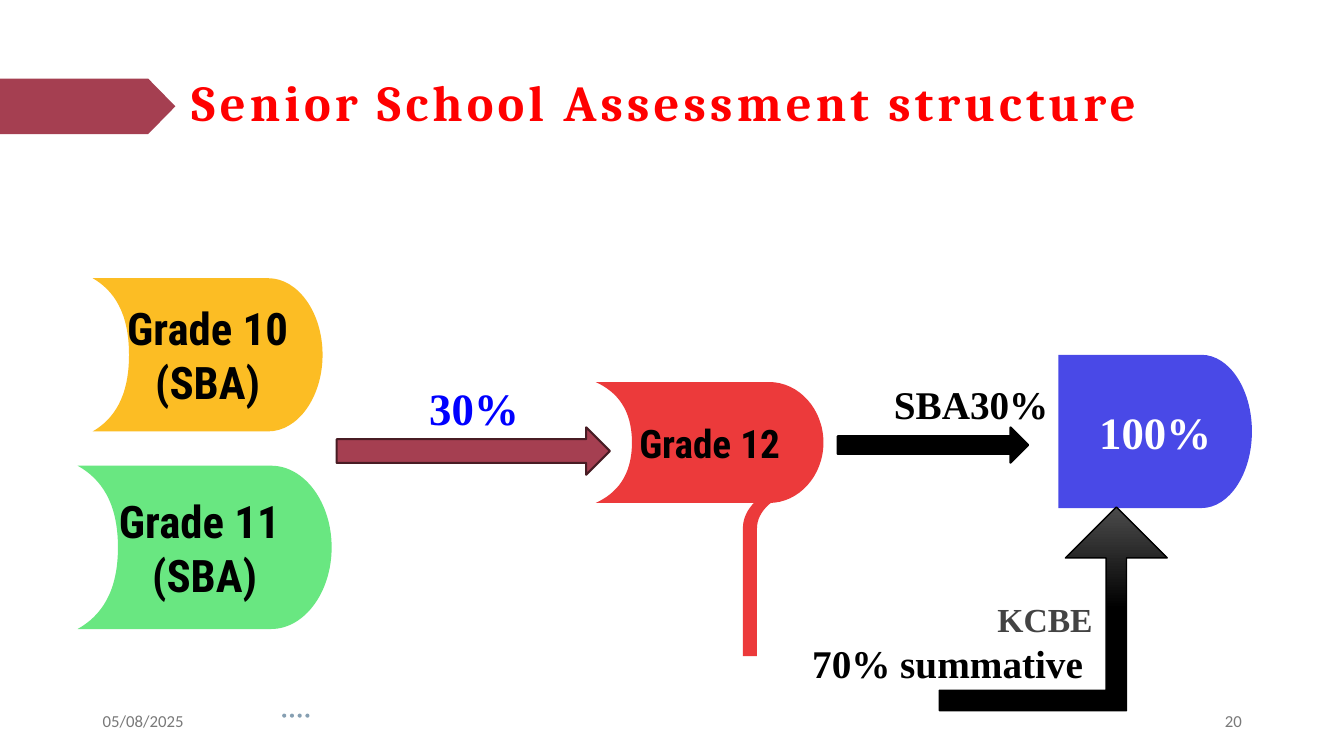
from lxml import etree
from pptx import Presentation
from pptx.dml.color import RGBColor
from pptx.enum.shapes import MSO_SHAPE
from pptx.enum.text import MSO_ANCHOR, PP_ALIGN
from pptx.oxml.ns import qn
from pptx.util import Inches, Pt

LEFT, CENTER, RIGHT = PP_ALIGN.LEFT, PP_ALIGN.CENTER, PP_ALIGN.RIGHT
TOP, MIDDLE = MSO_ANCHOR.TOP, MSO_ANCHOR.MIDDLE
PENTAGON, OVAL = MSO_SHAPE.PENTAGON, MSO_SHAPE.OVAL
RIGHT_ARROW, BENT_ARROW = MSO_SHAPE.RIGHT_ARROW, MSO_SHAPE.BENT_UP_ARROW
SERIF, CONDENSED = "Times New Roman", "Roboto Condensed"


def paint(shape, fill, line=None, width=1.5):
    shape.shadow.inherit = False
    shape.fill.solid()
    shape.fill.fore_color.rgb = RGBColor.from_string(fill)
    if line:
        shape.line.color.rgb = RGBColor.from_string(line)
        shape.line.width = Pt(width)
    else:
        shape.line.fill.background()


def write(shape, lines, font, align, anchor, inset=None, bold=True, spacing=None):
    """Each line is (text, size, colour)."""
    frame = shape.text_frame
    frame.word_wrap = True
    frame.vertical_anchor = anchor
    if inset:
        frame.margin_left = frame.margin_right = Inches(inset)
        frame.margin_top = frame.margin_bottom = Inches(inset)
    for index, (text, size, colour) in enumerate(lines):
        paragraph = frame.add_paragraph() if index else frame.paragraphs[0]
        paragraph.text = text
        paragraph.alignment = align
        if spacing:
            paragraph.line_spacing = spacing
        paragraph.font.name = font
        paragraph.font.size = Pt(size)
        paragraph.font.bold = bold
        paragraph.font.color.rgb = RGBColor.from_string(colour)


prs = Presentation()
prs.slide_width, prs.slide_height = Inches(40 / 3), Inches(7.5)
slide = prs.slides.add_slide(prs.slide_layouts[6])
shapes = slide.shapes

# Title with its banner
banner = shapes.add_shape(PENTAGON, Inches(0), Inches(0.78), Inches(1.74), Inches(0.55))
banner.adjustments[0] = 0.49
paint(banner, "A53F51")
title = shapes.add_textbox(Inches(1.77), Inches(0.69), Inches(11.24), Inches(0.7))
write(title, [("Senior School Assessment structure", 36, "FF0000")],
      "Cambria", LEFT, MIDDLE, 0.13, spacing=0.9)
title.text_frame.paragraphs[0].runs[0].font._element.set("spc", "300")

# Stem hanging from Grade 12: one point makes a line, three points a curve
outlines = [("EC3A3B", [], (7.82, 4.8), [
    [(7.54, 4.88), (7.37, 5.05), (7.37, 5.24)], [(7.37, 6.51)], [(7.51, 6.51)],
    [(7.51, 5.24)], [(7.51, 5.07), (7.68, 4.91), (7.95, 4.86)], [(7.95, 4.8)]])]

# Grade pods: left, top, width, height, notch depth, depth of the round end
pods = [
    (10.5, 3.52, 1.92, 1.52, 0, 0.5, "4949E7", SERIF, [("100%", 32, "FFFFFF")]),
    (0.92, 2.76, 2.28, 1.52, 0.36, 0.54, "FCBD24", CONDENSED,
     [("Grade 10", 32, "000000"), ("(SBA)", 32, "000000")]),
    (0.77, 4.62, 2.52, 1.62, 0.4, 0.6, "69E781", CONDENSED,
     [("Grade 11 ", 32, "000000"), ("(SBA)", 32, "000000")]),
    (5.91, 3.79, 2.26, 1.2, 0.36, 0.54, "EC3A3B", CONDENSED,
     [("Grade 12", 28, "000000")]),
]
for left, top, width, height, notch, bulge, fill, font, lines in pods:
    half = height / 2
    right, bottom, middle = left + width, top + height, top + half
    upper, lower = middle - 0.55 * half, middle + 0.55 * half
    shoulder, swell = right - bulge, right - 0.45 * bulge
    dent, hollow = left + 0.58 * notch, left + notch
    segments = [
        [(shoulder, bottom)],
        [(swell, bottom), (right, lower), (right, middle)],
        [(right, upper), (swell, top), (shoulder, top)],
    ]
    if notch:
        segments = [
            [(dent, top + 0.16 * half), (hollow, upper), (hollow, middle)],
            [(hollow, lower), (dent, bottom - 0.16 * half), (left, bottom)],
        ] + segments
    else:
        segments = [[(left, bottom)]] + segments
    outlines.append((fill, [(font, lines)], (left, top), segments))

for fill, labels, start, segments in outlines:
    builder = shapes.build_freeform(Inches(start[0]), Inches(start[1]))
    builder.add_line_segments([(Inches(x), Inches(y)) for points in segments
                               for x, y in points], close=True)
    pod = builder.convert_to_shape()
    # Merge the three steps of each curve into one Bezier segment
    steps = iter(list(pod._element.iter(qn("a:lnTo"))))
    for points in segments:
        group = [next(steps) for point in points]
        if len(group) == 3:
            bezier = etree.Element(qn("a:cubicBezTo"))
            group[0].addprevious(bezier)
            for step in group:
                bezier.append(step[0])
                step.getparent().remove(step)
    paint(pod, fill)
    for font, lines in labels:
        write(pod, lines, font, CENTER, MIDDLE, 0.13)

# Row of dots
for index in range(4):
    dot = shapes.add_shape(OVAL, Inches(2.8 + index * 0.23 / 3), Inches(7.08),
                           Inches(0.04), Inches(0.04))
    paint(dot, "869FB2")

# Arrows
for left, top, width, height, fill, line in [
    (3.34, 4.24, 2.71, 0.47, "A53F51", "481C24"),
    (8.31, 4.24, 1.89, 0.35, "000000", "000000"),
]:
    arrow = shapes.add_shape(RIGHT_ARROW, Inches(left), Inches(top),
                             Inches(width), Inches(height))
    paint(arrow, fill, line)

summative_arrow = shapes.add_shape(BENT_ARROW, Inches(9.32), Inches(5.03),
                                   Inches(2.26), Inches(2.02))
paint(summative_arrow, "000000", "000000", 1)
summative_arrow.adjustments[0] = 0.1
summative_arrow.fill.gradient()
summative_arrow.fill.gradient_angle = 270
for stop, position, colour in zip(summative_arrow.fill.gradient_stops,
                                  (0, 0.5), ("4B4B4B", "000000")):
    stop.position = position
    stop.color.rgb = RGBColor.from_string(colour)

# Weights beside the arrows, date and page number
for left, top, width, height, lines, font, align, anchor, inset, bold, spacing in [
    (6.87, 5.81, 4.1, 0.84, [("KCBE", 24, "434343"), ("70% summative ", 28, "000000")],
     SERIF, RIGHT, TOP, 0.13, True, None),
    (4.16, 3.73, 2.01, 1.11, [("30%", 32, "0000FF")], SERIF, LEFT, TOP, None, True, None),
    (8.77, 3.49, 1.93, 0.72, [("SBA30%", 28, "000000")], SERIF, LEFT, TOP, None, True, 1.5),
    (0.92, 6.95, 3, 0.4, [("05/08/2025", 12, "797979")],
     "Calibri", LEFT, MIDDLE, None, False, None),
    (9.42, 6.95, 3, 0.4, [("20", 12, "797979")],
     "Calibri", RIGHT, MIDDLE, None, False, None),
]:
    caption = shapes.add_textbox(Inches(left), Inches(top), Inches(width), Inches(height))
    write(caption, lines, font, align, anchor, inset, bold, spacing)

prs.save("out.pptx")
